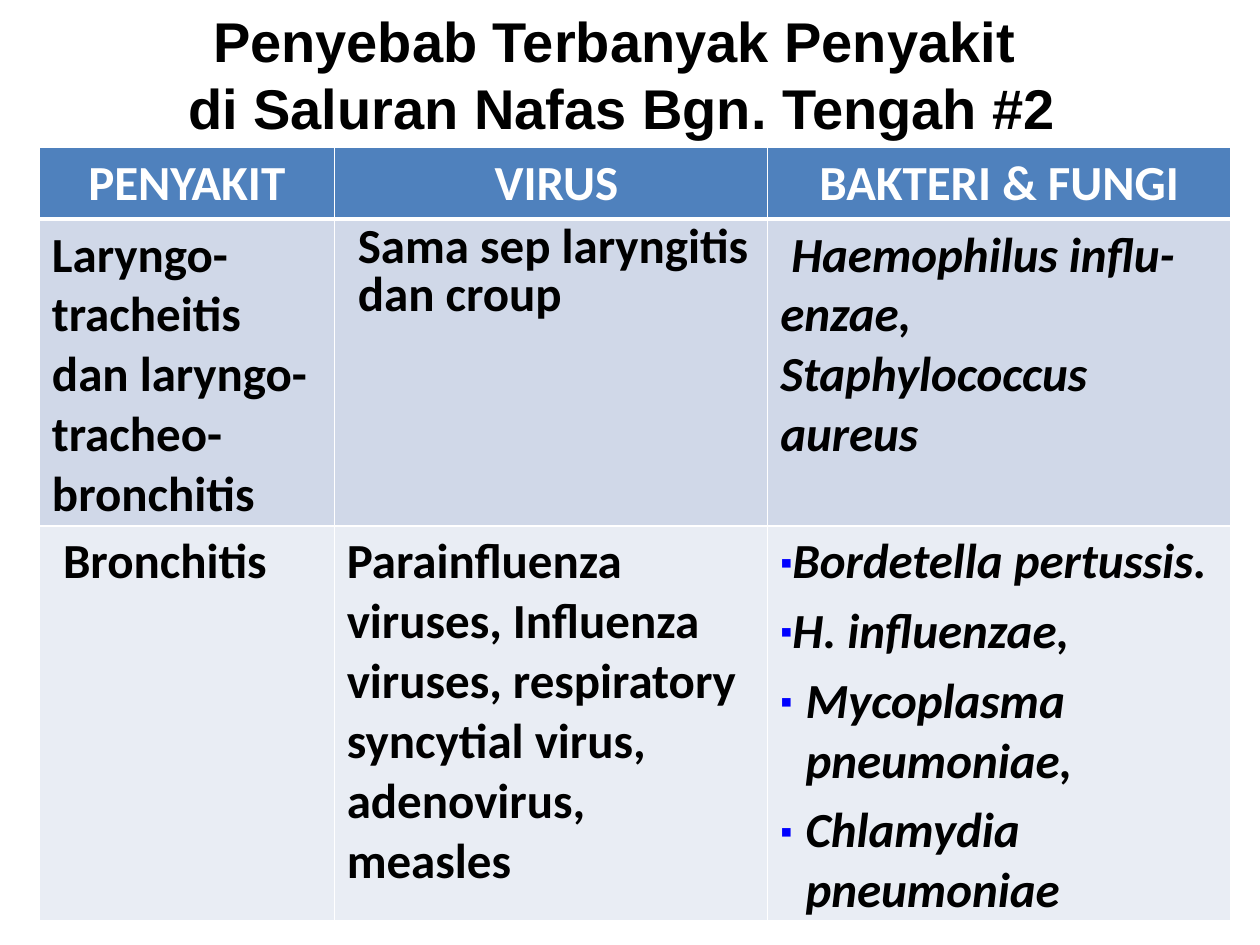
from lxml import etree
from pptx import Presentation
from pptx.dml.color import RGBColor
from pptx.enum import text
from pptx.oxml.ns import qn
from pptx.util import Pt

BLACK = RGBColor(0x00, 0x00, 0x00)
WHITE = RGBColor(0xFF, 0xFF, 0xFF)
HEADER = RGBColor(0x4F, 0x81, 0xBD)
BAND_DARK = RGBColor(0xD0, 0xD8, 0xE8)
BAND_LIGHT = RGBColor(0xE9, 0xED, 0xF4)
BULLET = RGBColor(0x00, 0x00, 0xFF)

# Content: each cell is a list of (text, options)
TITLE = ["Penyebab Terbanyak Penyakit ", "di Saluran Nafas Bgn. Tengah #2"]
ITALIC = {"italic": True}
ITEM = {"italic": True, "before": 5.6, "bullet": True}
HANGING = {**ITEM, "left": 14.4, "indent": -14.4}
CENTERED = {"center": True}
ROWS = [
    [[("PENYAKIT", CENTERED)], [(" VIRUS", CENTERED)],
     [("BAKTERI & FUNGI", CENTERED)]],
    [[("Laryngo-tracheitis dan laryngo-tracheo-bronchitis", {})],
     [("Sama sep laryngitis dan croup",
       {"before": 5.6, "spacing": 0.8, "left": 6.3})],
     [(" Haemophilus influ-enzae, Staphylococcus aureus", ITALIC)]],
    [[(" Bronchitis", {})],
     [("Parainfluenza viruses, Influenza viruses, respiratory "
       "syncytial virus, adenovirus, measles", {"before": 5.6})],
     [("Bordetella pertussis.", ITEM), ("H. influenzae,", ITEM),
      ("Mycoplasma pneumoniae,", HANGING),
      ("Chlamydia pneumoniae", HANGING)]],
]
COL_WIDTHS = [168.5, 247.7, 264.4]
ROW_HEIGHTS = [40.4, 175.2, 225]
ROW_FILLS = [HEADER, BAND_DARK, BAND_LIGHT]


def style_font(p, name, size, color, italic=None):
    for r in p.runs:
        f = r.font
        f.name, f.size, f.bold, f.italic = name, Pt(size), True, italic
        f.color.rgb = color


def add_bullet(pPr):
    color = etree.SubElement(pPr, qn("a:buClr"))
    etree.SubElement(color, qn("a:srgbClr"), val=str(BULLET))
    etree.SubElement(pPr, qn("a:buSzPct"), val="70000")
    etree.SubElement(pPr, qn("a:buFont"), typeface="Arial")
    etree.SubElement(pPr, qn("a:buChar"), char="▪")


def set_borders(cell, top, bottom):
    tcPr = cell._tc.get_or_add_tcPr()
    sides = [("L", 1), ("R", 1), ("T", top), ("B", bottom)]
    for i, (side, width) in enumerate(sides):
        ln = etree.Element(qn("a:ln" + side), w=str(Pt(width)))
        fill = etree.SubElement(ln, qn("a:solidFill"))
        etree.SubElement(fill, qn("a:srgbClr"), val=str(WHITE))
        tcPr.insert(i, ln)


def fill_cell(cell, paragraphs, color):
    tf = cell.text_frame
    tf.text = "\n".join(words for words, _ in paragraphs)
    for p, (_, opts) in zip(tf.paragraphs, paragraphs):
        style_font(p, "Calibri", 28, color, opts.get("italic"))
        if opts.get("center"):
            p.alignment = text.PP_ALIGN.CENTER
        if "spacing" in opts:
            p.line_spacing = opts["spacing"]
        if "before" in opts:
            p.space_before = Pt(opts["before"])
        pPr = p._p.get_or_add_pPr()
        pPr.set("marL", str(Pt(opts.get("left", 0))))
        pPr.set("indent", str(Pt(opts.get("indent", 0))))
        if opts.get("bullet"):
            add_bullet(pPr)


prs = Presentation()
prs.slide_width, prs.slide_height = Pt(720), Pt(540)
s = prs.slides.add_slide(prs.slide_layouts[6])

# Title
tf = s.shapes.add_textbox(Pt(98.6), Pt(0), Pt(514), Pt(85)).text_frame
tf.word_wrap = False
tf.auto_size = text.MSO_AUTO_SIZE.SHAPE_TO_FIT_TEXT
tf.text = "\n".join(TITLE)
for p in tf.paragraphs:
    p.alignment = text.PP_ALIGN.CENTER
    style_font(p, "Arial", 32, BLACK)

# Table of causes
table = s.shapes.add_table(len(ROWS), len(COL_WIDTHS), Pt(22.5), Pt(84.4),
                           Pt(sum(COL_WIDTHS)), Pt(sum(ROW_HEIGHTS))).table
for col, width in zip(table.columns, COL_WIDTHS):
    col.width = Pt(width)
for i, row in enumerate(ROWS):
    table.rows[i].height = Pt(ROW_HEIGHTS[i])
    for j, paragraphs in enumerate(row):
        cell = table.cell(i, j)
        cell.fill.solid()
        cell.fill.fore_color.rgb = ROW_FILLS[i]
        set_borders(cell, 3 if i == 1 else 1, 3 if i == 0 else 1)
        fill_cell(cell, paragraphs, WHITE if i == 0 else BLACK)

prs.save("out.pptx")
